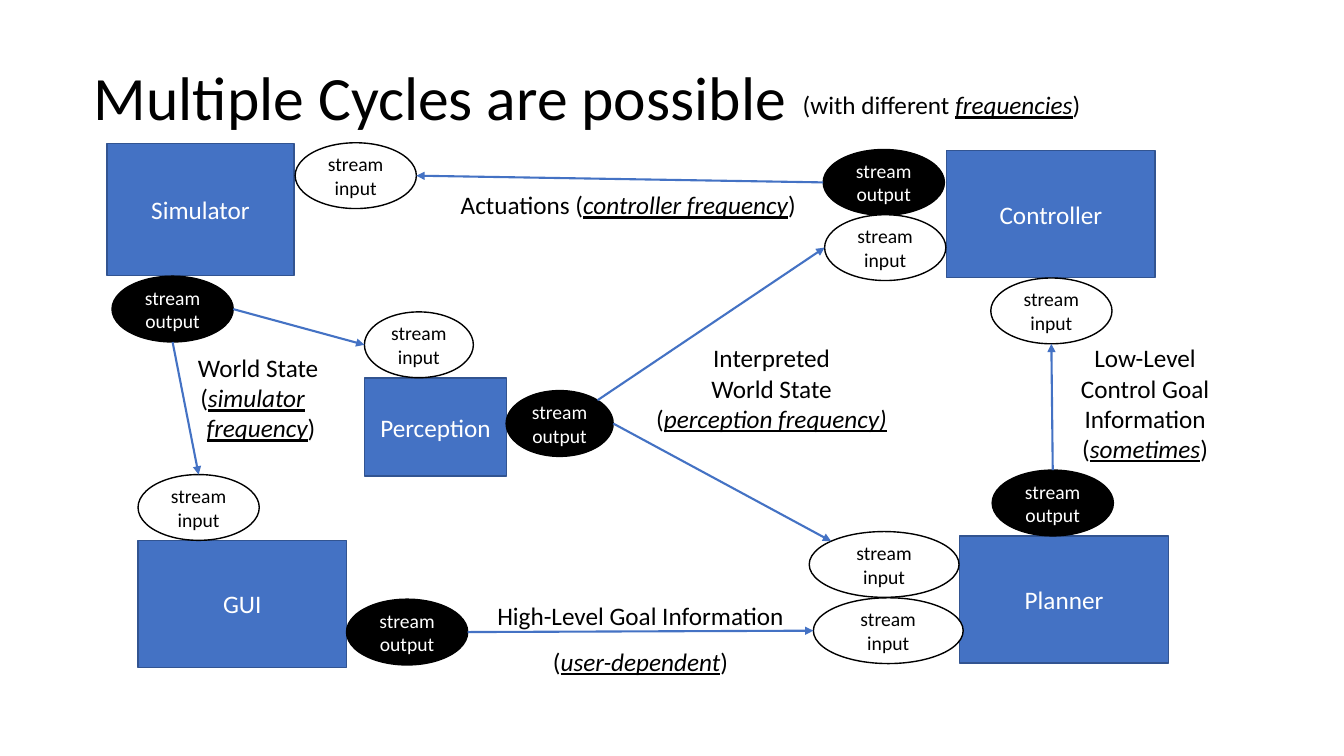
import math

import pptx
import pptx.dml.color
import pptx.enum.shapes
import pptx.enum.text
import pptx.oxml.ns
import pptx.util
from lxml import etree

Pt = pptx.util.Pt
RGBColor = pptx.dml.color.RGBColor
Shape = pptx.enum.shapes.MSO_SHAPE
Align = pptx.enum.text.PP_ALIGN
Anchor = pptx.enum.text.MSO_ANCHOR
qn = pptx.oxml.ns.qn

BLUE = RGBColor(0x44, 0x72, 0xC4)
DARK_BLUE = RGBColor(0x32, 0x54, 0x91)
BLACK = RGBColor(0x00, 0x00, 0x00)
WHITE = RGBColor(0xFF, 0xFF, 0xFF)

RIGHT, BOTTOM, LEFT, TOP = 0, 90, 180, 270
UPPER_LEFT, UPPER_RIGHT = 225, 315


class CycleDiagram:
    font_name = "Calibri"
    text_size = 18
    stream_size = 14
    stream_height = 47

    def __init__(self, presentation):
        self.slide = presentation.slides.add_slide(presentation.slide_layouts[6])

    def style(self, paragraph, size, color, align):
        paragraph.alignment = align
        paragraph.font.name = self.font_name
        paragraph.font.size = Pt(size)
        paragraph.font.color.rgb = color

    def node(self, kind, bounds, lines, size, fill, outline, color):
        shape = self.slide.shapes.add_shape(kind, *map(Pt, bounds))
        shape.shadow.inherit = False
        shape.fill.solid()
        shape.fill.fore_color.rgb = fill
        shape.line.color.rgb = outline
        shape.line.width = Pt(1)
        frame = shape.text_frame
        frame.word_wrap = True
        frame.vertical_anchor = Anchor.MIDDLE
        frame.text = lines
        for paragraph in frame.paragraphs:
            self.style(paragraph, size, color, Align.CENTER)
        return shape

    def module(self, name, left, top, width=149, height=90.7):
        return self.node(Shape.RECTANGLE, (left, top, width, height), name,
                         self.text_size, BLUE, DARK_BLUE, WHITE)

    def stream(self, direction, left, top, width=86.6):
        fill, color = (BLACK, WHITE) if direction == "output" else (WHITE, BLACK)
        return self.node(Shape.OVAL, (left, top, width, self.stream_height),
                         f"stream\n{direction}", self.stream_size, fill, BLACK, color)

    def label(self, bounds, *lines, size=text_size, align=Align.CENTER,
              spacing=1, indents=None, anchor=Anchor.TOP):
        frame = self.slide.shapes.add_textbox(*map(Pt, bounds)).text_frame
        frame.word_wrap = True
        frame.vertical_anchor = anchor
        for index, line in enumerate(lines):
            paragraph = frame.add_paragraph() if index else frame.paragraphs[0]
            self.style(paragraph, size, BLACK, align)
            paragraph.line_spacing = spacing
            if indents:
                paragraph._p.get_or_add_pPr().set("marL", str(Pt(indents[index])))
            for part, text in enumerate(line.split("_")):
                if text:
                    run = paragraph.add_run()
                    run.text = text
                    if part % 2:
                        run.font.italic = True
                        run.font.underline = True

    def rim_point(self, stream, angle):
        radians = math.radians(angle)
        return (round(stream.left + stream.width / 2 * (1 + math.cos(radians))),
                round(stream.top + stream.height / 2 * (1 + math.sin(radians))))

    def arrow(self, source, source_angle, target, target_angle):
        connector = self.slide.shapes.add_connector(
            pptx.enum.shapes.MSO_CONNECTOR.STRAIGHT,
            *self.rim_point(source, source_angle),
            *self.rim_point(target, target_angle))
        connector.line.color.rgb = BLUE
        connector.line.width = Pt(1.5)
        line = connector.line._get_or_add_ln()
        etree.SubElement(line, qn("a:tailEnd"), type="triangle")
        etree.SubElement(connector._element.spPr, qn("a:effectLst"))


def main():
    presentation = pptx.Presentation()
    presentation.slide_width = Pt(960)
    presentation.slide_height = Pt(540)
    diagram = CycleDiagram(presentation)

    diagram.label((60, 19.5, 828, 104.4), "Multiple Cycles are possible", size=44,
                  align=Align.LEFT, spacing=0.9, anchor=Anchor.MIDDLE)
    diagram.label((566.3, 60.5, 268, 29), "(with different _frequencies_)",
                  align=Align.LEFT)

    diagram.module("Simulator", 76.5, 102.7, 133.5, 94.3)
    diagram.module("GUI", 98.6, 386)
    diagram.module("Planner", 685.6, 383)
    diagram.module("Controller", 676.2, 107.7)
    diagram.module("Perception", 260.3, 270, 101.5, 70)

    simulator_input = diagram.stream("input", 210.8, 102)
    simulator_output = diagram.stream("output", 80, 197.3)
    gui_input = diagram.stream("input", 98.6, 339)
    gui_output = diagram.stream("output", 247.5, 428)
    planner_goal_input = diagram.stream("input", 581, 427, 107)
    planner_state_input = diagram.stream("input", 578, 379.7, 107)
    planner_output = diagram.stream("output", 708.7, 335.8)
    controller_output = diagram.stream("output", 588, 106.8)
    controller_state_input = diagram.stream("input", 589, 153.4)
    controller_goal_input = diagram.stream("input", 707.7, 198.6)
    perception_output = diagram.stream("output", 361.5, 279, 76.5)
    perception_input = diagram.stream("input", 260.3, 222.8, 77.8)

    diagram.arrow(controller_output, LEFT, simulator_input, RIGHT)
    diagram.arrow(simulator_output, RIGHT, perception_input, LEFT)
    diagram.arrow(simulator_output, BOTTOM, gui_input, TOP)
    diagram.arrow(perception_output, UPPER_RIGHT, controller_state_input, LEFT)
    diagram.arrow(perception_output, RIGHT, planner_state_input, UPPER_LEFT)
    diagram.arrow(gui_output, RIGHT, planner_goal_input, LEFT)
    diagram.arrow(planner_output, TOP, controller_goal_input, BOTTOM)

    diagram.label((322, 132, 267, 29), "Actuations (_controller frequency_)",
                  align=Align.LEFT)
    diagram.label((446.4, 241.2, 209.5, 72.7), "Interpreted", "World State",
                  "(_perception frequency)_")
    diagram.label((758.2, 241.2, 119.5, 94.3),
                  "Low-Level Control Goal Information (_sometimes_)")
    diagram.label((124.6, 248, 111.6, 72.7), "World State", "(_simulator_",
                  "_frequency_)", indents=(8, 0, 12))
    diagram.label((334, 414.7, 247, 69),
                  "High-Level Goal Information (_user-dependent_)", spacing=1.5)

    presentation.save("out.pptx")


if __name__ == "__main__":
    main()
